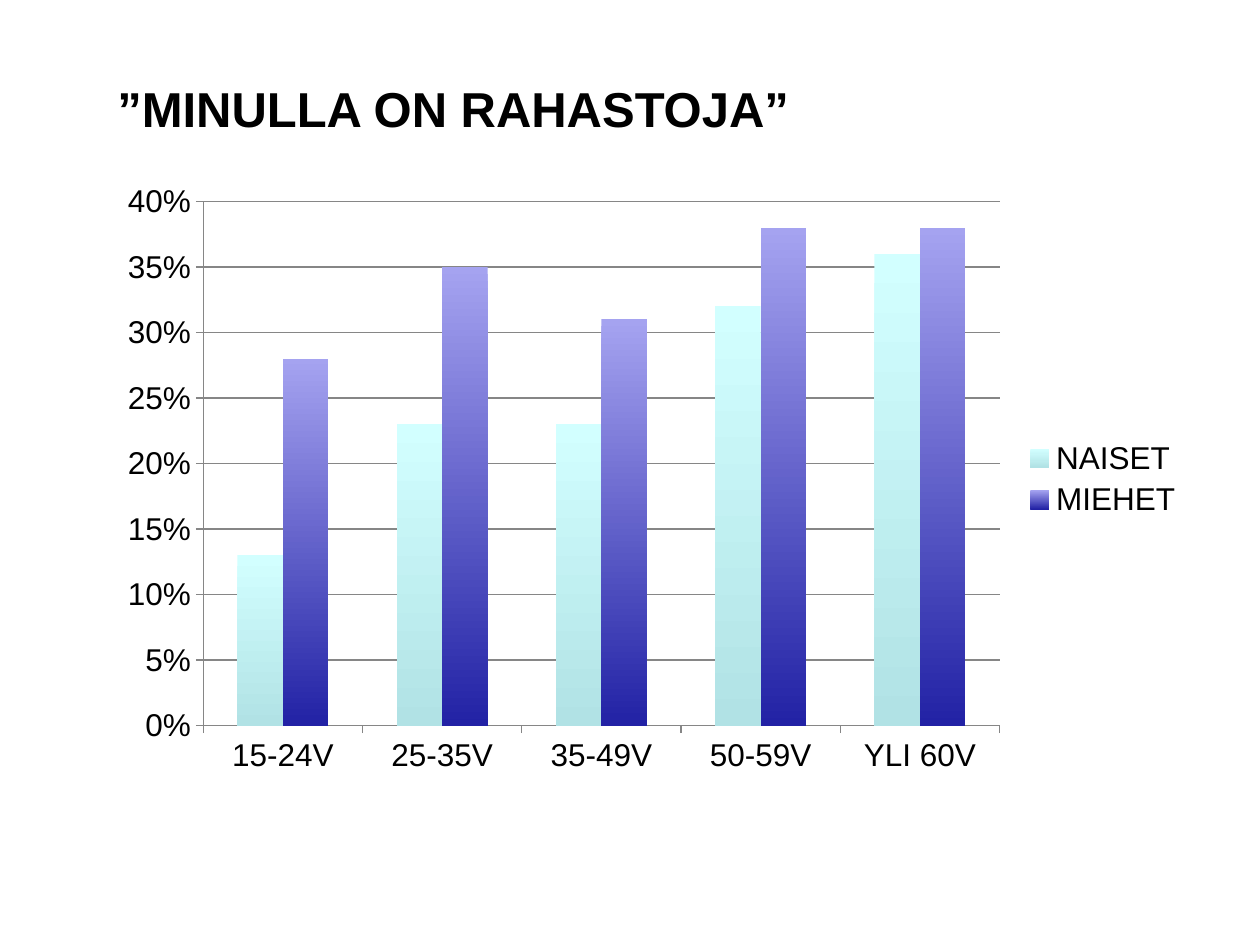
from dataclasses import dataclass

from pptx import Presentation
from pptx.chart.data import CategoryChartData
from pptx.dml.color import RGBColor
from pptx.enum.chart import XL_CHART_TYPE as ChartType
from pptx.enum.chart import XL_LEGEND_POSITION as LegendPosition
from pptx.enum.chart import XL_TICK_MARK as TickMark
from pptx.enum.text import MSO_ANCHOR as Anchor
from pptx.oxml import parse_xml
from pptx.oxml.ns import nsdecls
from pptx.util import Pt

FONT = "Arial"
COLORS = {
    "text": "000000",
    "grid": "868686",
    "women_top": "D2FFFF",
    "women_bottom": "B1E2E5",
    "men_top": "A5A3F0",
    "men_bottom": "2222A5",
}
CATEGORIES = ["15-24V", "25-35V", "35-49V", "50-59V", "YLI 60V"]
# Inner plot area as fractions of the chart frame
PLOT_LAYOUT = {"x": 0.09, "y": 0.05, "w": 0.73, "h": 0.85}


@dataclass
class Box:
    left: float
    top: float
    width: float
    height: float

    def lengths(self) -> list:
        return [Pt(v) for v in (self.left, self.top, self.width, self.height)]


@dataclass
class Group:
    name: str
    values: list[float]
    top_color: str
    bottom_color: str


GROUPS = [
    Group("NAISET", [0.13, 0.23, 0.23, 0.32, 0.36], "women_top", "women_bottom"),
    Group("MIEHET", [0.28, 0.35, 0.31, 0.38, 0.38], "men_top", "men_bottom"),
]


def rgb(name: str) -> RGBColor:
    return RGBColor.from_string(COLORS[name])


def apply_format(target, values: dict) -> None:
    for name, value in values.items():
        setattr(target, name, value)


def style_font(font, size: float, bold: bool = False) -> None:
    apply_format(font, {"name": FONT, "size": Pt(size), "bold": bold})
    font.color.rgb = rgb("text")


def add_title(slide, text: str, box: Box) -> None:
    frame = slide.shapes.add_textbox(*box.lengths()).text_frame
    apply_format(frame, {"word_wrap": True, "vertical_anchor": Anchor.TOP,
                         "margin_top": Pt(7.6)})
    paragraph = frame.paragraphs[0]
    paragraph.text = text
    style_font(paragraph.runs[0].font, 28, bold=True)


def style_line(line) -> None:
    line.color.rgb = rgb("grid")
    line.width = Pt(0.75)


def style_series(series, group: Group) -> None:
    fill = series.format.fill
    fill.gradient()
    fill.gradient_angle = 270
    for stop, color in zip(fill.gradient_stops, (group.top_color, group.bottom_color)):
        stop.color.rgb = rgb(color)
    series.format.line.fill.background()


def set_plot_layout(chart) -> None:
    plot_area = chart._chartSpace.chart.plotArea
    for old_layout in plot_area.findall("{*}layout"):
        plot_area.remove(old_layout)
    sizes = "".join(f'<c:{key} val="{value}"/>' for key, value in PLOT_LAYOUT.items())
    plot_area.insert(0, parse_xml(
        f'<c:layout {nsdecls("c")}><c:manualLayout><c:layoutTarget val="inner"/>'
        f'<c:xMode val="edge"/><c:yMode val="edge"/>{sizes}</c:manualLayout></c:layout>'))


def add_column_chart(slide, groups: list[Group], box: Box) -> None:
    data = CategoryChartData(number_format="0%")
    data.categories = CATEGORIES
    for group in groups:
        data.add_series(group.name, group.values)
    chart = slide.shapes.add_chart(
        ChartType.COLUMN_CLUSTERED, *box.lengths(), data).chart
    style_font(chart.font, 18)
    chart.has_title = False

    # Columns
    plot = chart.plots[0]
    apply_format(plot, {"gap_width": 150, "overlap": 0, "vary_by_categories": False})
    for series, group in zip(plot.series, groups):
        style_series(series, group)

    # Axes
    for axis in (chart.category_axis, chart.value_axis):
        apply_format(axis, {"major_tick_mark": TickMark.OUTSIDE,
                            "minor_tick_mark": TickMark.NONE})
        style_line(axis.format.line)
    value_axis = chart.value_axis
    apply_format(value_axis, {"minimum_scale": 0, "maximum_scale": 0.4,
                              "major_unit": 0.05, "has_major_gridlines": True})
    style_line(value_axis.major_gridlines.format.line)
    apply_format(value_axis.tick_labels, {"number_format": "0%",
                                          "number_format_is_linked": False})

    # Legend
    chart.has_legend = True
    apply_format(chart.legend, {"position": LegendPosition.RIGHT,
                                "include_in_layout": False})
    set_plot_layout(chart)


def main() -> None:
    presentation = Presentation()
    presentation.slide_width, presentation.slide_height = Pt(720), Pt(540)
    slide = presentation.slides.add_slide(presentation.slide_layouts[6])
    add_title(slide, "”MINULLA ON RAHASTOJA”", Box(60, 37.5, 522, 60))
    add_column_chart(slide, GROUPS, Box(60, 97.5, 623.5, 352.5))
    presentation.save("out.pptx")


if __name__ == "__main__":
    main()
